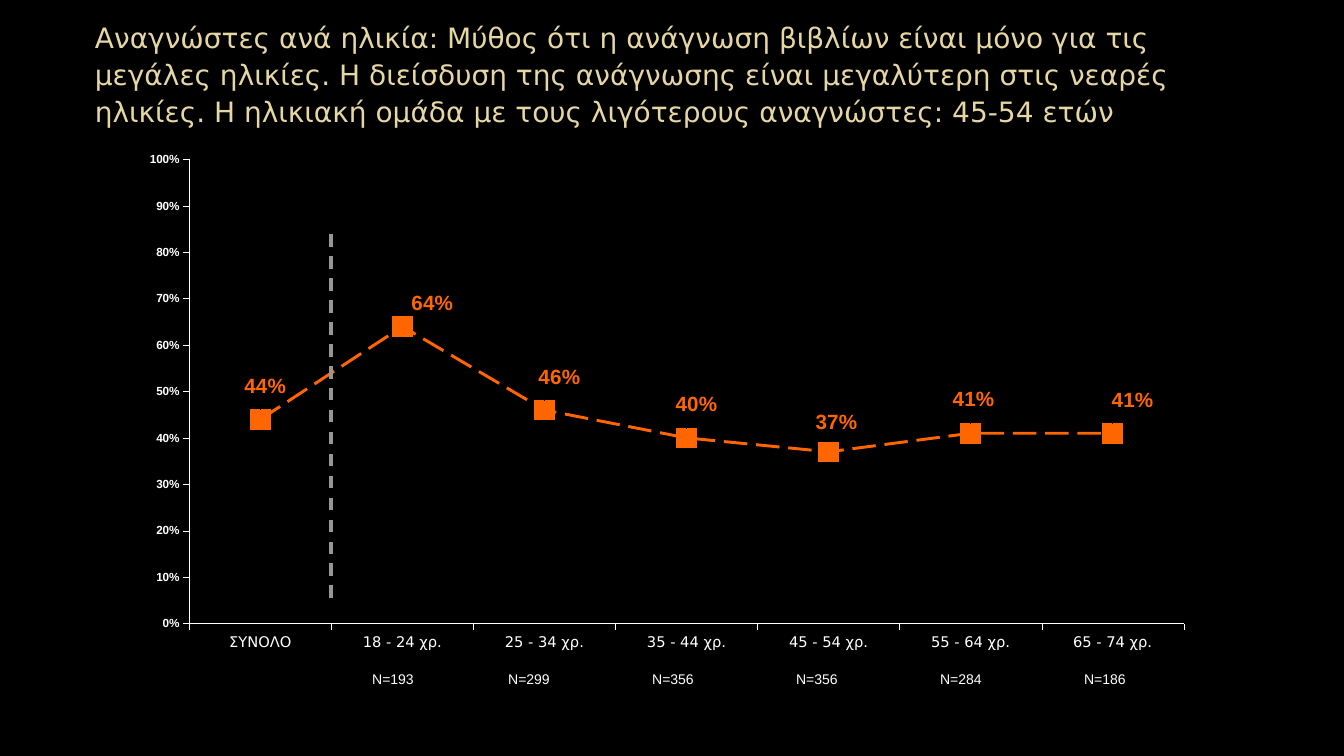
from dataclasses import dataclass

from lxml import etree
from pptx import Presentation
from pptx.chart.chart import Chart
from pptx.chart.data import CategoryChartData
from pptx.dml.color import RGBColor
from pptx.enum.chart import XL_CHART_TYPE as ChartType
from pptx.enum.chart import XL_LABEL_POSITION as LabelPosition
from pptx.enum.chart import XL_MARKER_STYLE as MarkerStyle
from pptx.enum.chart import XL_TICK_MARK as TickMark
from pptx.enum.dml import MSO_LINE_DASH_STYLE as Dash
from pptx.enum.shapes import MSO_CONNECTOR as ConnectorType
from pptx.enum.text import MSO_ANCHOR as Anchor
from pptx.enum.text import PP_ALIGN as Align
from pptx.oxml.ns import qn
from pptx.slide import Slide
from pptx.util import Emu, Pt

COLORS = {
    "background": "000000",
    "title": "E5D6A4",
    "text": "FFFFFF",
    "series": "FF6600",
    "divider": "969696",
}
SANS, ARIAL = "DejaVu Sans", "Arial"
PX_PER_INCH = 100.8
CHART_WIDTH, CHART_HEIGHT = 1035, 550
NO_TABLE_STYLE = "{2D5ABB26-0587-4C30-8999-92F81FD0307C}"
TITLE = (
    "Αναγνώστες ανά ηλικία: Μύθος ότι η ανάγνωση βιβλίων είναι μόνο για τις "
    "μεγάλες ηλικίες. Η διείσδυση της ανάγνωσης είναι μεγαλύτερη στις νεαρές "
    "ηλικίες. Η ηλικιακή ομάδα με τους λιγότερους αναγνώστες: 45-54 ετών"
)


@dataclass(frozen=True)
class AgeGroup:
    name: str
    share: float
    label_dx: int  # label shift from its place above the marker, in px
    label_dy: int
    sample: str = ""


AGE_GROUPS = [
    AgeGroup("ΣΥΝΟΛΟ", 0.44, 5, -8),
    AgeGroup("18 - 24 χρ.", 0.64, 30, 2, "Ν=193"),
    AgeGroup("25 - 34 χρ.", 0.46, 15, -8, "Ν=299"),
    AgeGroup("35 - 44 χρ.", 0.40, 10, -8, "Ν=356"),
    AgeGroup("45 - 54 χρ.", 0.37, 8, -4, "Ν=356"),
    AgeGroup("55 - 64 χρ.", 0.41, 3, -9, "Ν=284"),
    AgeGroup("65 - 74 χρ.", 0.41, 20, -8, "Ν=186"),
]


def px(length: int) -> Emu:
    return Emu(round(length * 914400 / PX_PER_INCH))


def color(name: str) -> RGBColor:
    return RGBColor.from_string(COLORS[name])


def set_font(font, size: float, name: str, color_name: str, bold: bool = False) -> None:
    font.size, font.name, font.bold = Pt(size), name, bold
    font.color.rgb = color(color_name)


def manual_layout(**values: object):
    layout = etree.Element(qn("c:layout"))
    manual = etree.SubElement(layout, qn("c:manualLayout"))
    for tag, value in values.items():
        etree.SubElement(manual, qn(f"c:{tag}")).set("val", str(value))
    return layout


def style_axes(chart: Chart) -> None:
    for axis, size, name, bold in (
        (chart.category_axis, 10.5, SANS, False),
        (chart.value_axis, 8.4, ARIAL, True),
    ):
        axis.has_major_gridlines = False
        axis.major_tick_mark, axis.minor_tick_mark = TickMark.OUTSIDE, TickMark.NONE
        axis.format.line.color.rgb = color("text")
        axis.format.line.width = Pt(0.25)
        set_font(axis.tick_labels.font, size, name, "text", bold)
    value_axis = chart.value_axis
    value_axis.minimum_scale, value_axis.maximum_scale = 0, 1
    value_axis.major_unit = 0.1
    value_axis.tick_labels.number_format = "0%"
    value_axis.tick_labels.number_format_is_linked = False


def style_series(chart: Chart) -> None:
    series = chart.plots[0].series[0]
    series.smooth = False
    line = series.format.line
    line.color.rgb, line.width = color("series"), Pt(2.1)
    line.dash_style = Dash.LONG_DASH
    marker = series.marker
    marker.style, marker.size = MarkerStyle.SQUARE, 14
    marker.format.fill.solid()
    marker.format.fill.fore_color.rgb = color("series")
    marker.format.line.fill.background()

    labels = series.data_labels
    labels.show_value = True
    labels.number_format, labels.number_format_is_linked = "0%", False
    set_font(labels.font, 14.7, ARIAL, "series", True)
    for index, group in enumerate(AGE_GROUPS):
        label = series.points[index].data_label
        set_font(label.font, 14.7, ARIAL, "series", True)
        label.position = LabelPosition.ABOVE
        shift = manual_layout(
            x=round(group.label_dx / CHART_WIDTH, 4),
            y=round(group.label_dy / CHART_HEIGHT, 4),
        )
        label._get_or_add_dLbl().insert(1, shift)


def add_age_chart(slide: Slide) -> None:
    data = CategoryChartData(number_format="0%")
    data.categories = [group.name for group in AGE_GROUPS]
    data.add_series("Series 1", [group.share for group in AGE_GROUPS])
    chart = slide.shapes.add_chart(
        ChartType.LINE_MARKERS, px(149), px(110), px(CHART_WIDTH), px(CHART_HEIGHT), data
    ).chart
    chart.has_legend = chart.has_title = False
    chart.plots[0].vary_by_categories = False
    set_font(chart.font, 22.5, ARIAL, "text", True)
    style_axes(chart)
    style_series(chart)

    # Fixed inner plot area
    plot_area = chart._chartSpace.chart.plotArea
    for layout in plot_area.findall(qn("c:layout")):
        plot_area.remove(layout)
    plot_area.insert(0, manual_layout(
        layoutTarget="inner", xMode="edge", yMode="edge", x=0.04, y=0.09, w=0.961, h=0.844
    ))


def add_divider(slide: Slide) -> None:
    divider = slide.shapes.add_connector(
        ConnectorType.STRAIGHT, px(331), px(598), px(331), px(233)
    )
    divider.line.color.rgb, divider.line.width = color("divider"), Pt(2.25)
    divider.line.dash_style = Dash.DASH
    etree.SubElement(divider._element.spPr, qn("a:effectLst"))


def add_title(slide: Slide) -> None:
    frame = slide.shapes.add_textbox(px(85), px(12), px(1164), px(122)).text_frame
    frame.word_wrap = True
    frame.vertical_anchor = Anchor.MIDDLE
    paragraph = frame.paragraphs[0]
    paragraph.text = TITLE
    paragraph.line_spacing = 1.1
    set_font(paragraph.font, 20, SANS, "title")


def add_sample_table(slide: Slide) -> None:
    samples = [group.sample for group in AGE_GROUPS if group.sample]
    widths = [128] + [144] * (len(samples) - 1)
    table = slide.shapes.add_table(
        1, len(samples), px(329), px(666), px(sum(widths)), px(27)
    ).table
    table.first_row = table.horz_banding = False
    table._tbl.tblPr.find(qn("a:tableStyleId")).text = NO_TABLE_STYLE
    for index, (sample, width) in enumerate(zip(samples, widths)):
        table.columns[index].width = px(width)
        cell = table.cell(0, index)
        cell.fill.background()
        cell.vertical_anchor = Anchor.MIDDLE
        paragraph = cell.text_frame.paragraphs[0]
        paragraph.text = sample
        paragraph.alignment = Align.CENTER
        set_font(paragraph.font, 10, ARIAL, "text")


def main() -> None:
    presentation = Presentation()
    presentation.slide_width, presentation.slide_height = px(1344), px(756)
    slide = presentation.slides.add_slide(presentation.slide_layouts[6])
    slide.background.fill.solid()
    slide.background.fill.fore_color.rgb = color("background")
    add_age_chart(slide)
    add_divider(slide)
    add_title(slide)
    add_sample_table(slide)
    presentation.save("out.pptx")


if __name__ == "__main__":
    main()
